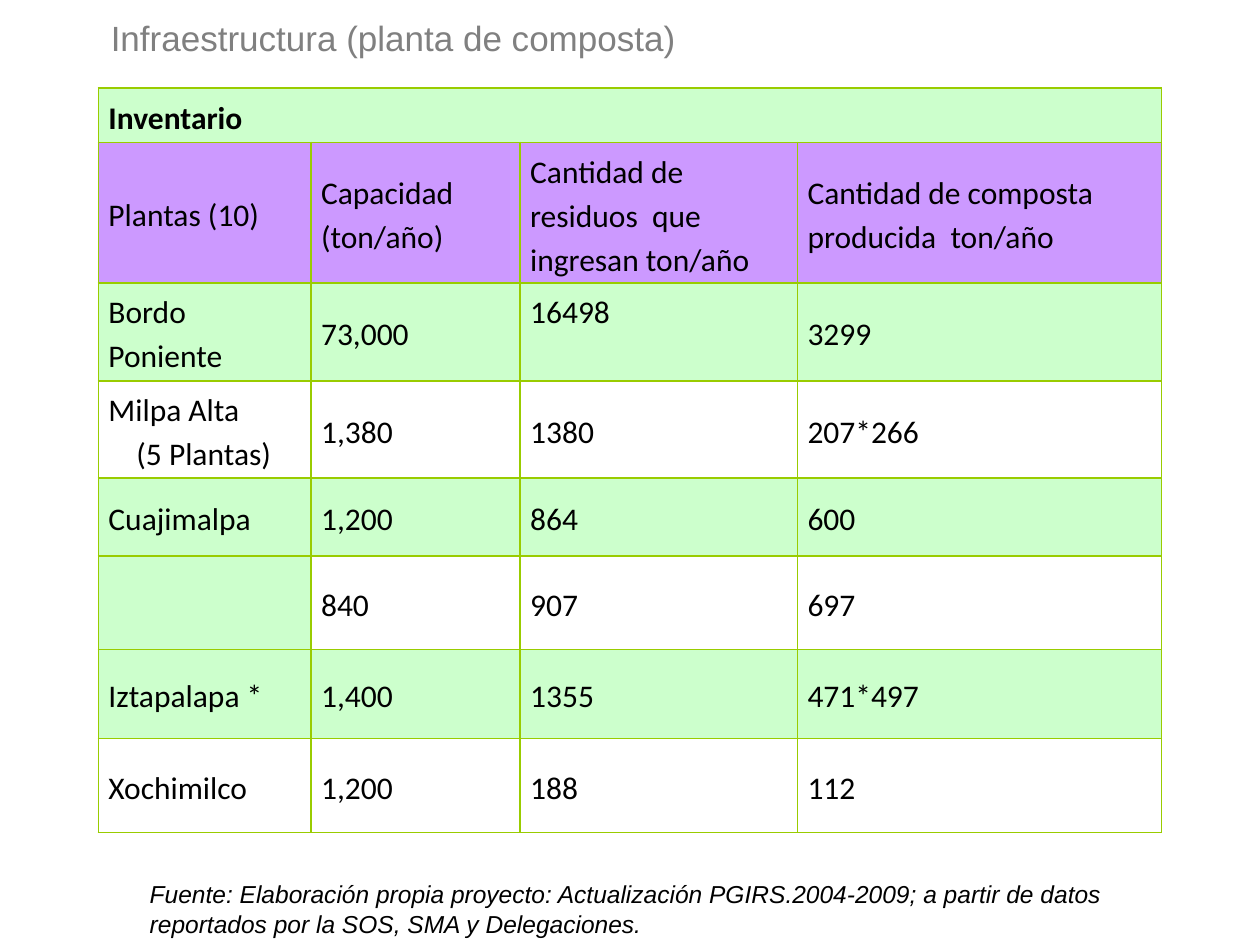
import pptx
import pptx.dml.color
import pptx.enum.text
import pptx.oxml
import pptx.oxml.ns
import pptx.util

Pt = pptx.util.Pt
RGBColor = pptx.dml.color.RGBColor
ANCHOR = pptx.enum.text.MSO_ANCHOR

BLACK = RGBColor(0x00, 0x00, 0x00)
GRAY = RGBColor(0x80, 0x80, 0x80)
GREEN = RGBColor(0xCC, 0xFF, 0xCC)
PURPLE = RGBColor(0xCC, 0x99, 0xFF)
BORDER = RGBColor(0x99, 0xCC, 0x00)

TITLE = "Infraestructura (planta de composta)"
SOURCE = ("Fuente: Elaboración propia proyecto: Actualización PGIRS.2004-2009; "
          "a partir de datos reportados por la SOS, SMA y Delegaciones.")
INVENTORY = [
    ("Inventario", "", "", ""),
    ("Plantas (10)", "Capacidad (ton/año)", "Cantidad de residuos  que ingresan ton/año",
     "Cantidad de composta producida  ton/año"),
    ("Bordo Poniente", "73,000", "16498", "3299"),
    ("Milpa Alta\v(5 Plantas)", "1,380", "1380", "207*266"),
    ("Cuajimalpa", "1,200", "864", "600"),
    ("", "840", "907", "697"),
    ("Iztapalapa *", "1,400", "1355", "471*497"),
    ("Xochimilco", "1,200", "188", "112"),
]
ROW_FILLS = [GREEN, PURPLE, GREEN, None, GREEN, None, GREEN, None]
CELL_FILLS = {(5, 0): GREEN}
TOP_ANCHORED = {(2, 2)}
HANGING = {(3, 0): 16}
COLUMN_WIDTHS = [121.5, 119.5, 158.5, 208]
ROW_HEIGHTS = [31, 80, 56, 55.5, 44.5, 53.5, 51, 53.5]
TABLE_LEFT, TABLE_TOP = 56.2, 50.4


def style(paragraph, font_name, size, color, bold=False, italic=False):
    font = paragraph.font
    font.name, font.size = font_name, Pt(size)
    font.bold, font.italic = bold, italic
    font.color.rgb = color


def add_text(slide, text, left, top, width, height, size, color, italic=False):
    frame = slide.shapes.add_textbox(Pt(left), Pt(top), Pt(width), Pt(height)).text_frame
    frame.word_wrap = True
    frame.text = text
    style(frame.paragraphs[0], "Arial", size, color, italic=italic)


def add_borders(cell):
    properties = cell._tc.get_or_add_tcPr()
    for side in ("lnL", "lnR", "lnT", "lnB"):
        properties.append(pptx.oxml.parse_xml(
            f'<a:{side} {pptx.oxml.ns.nsdecls("a")} w="{Pt(1)}"><a:solidFill>'
            f'<a:srgbClr val="{BORDER}"/></a:solidFill></a:{side}>'))


def fill_cell(cell, text, row, column):
    add_borders(cell)
    color = CELL_FILLS.get((row, column), ROW_FILLS[row])
    if color is None:
        cell.fill.background()
    else:
        cell.fill.solid()
        cell.fill.fore_color.rgb = color
    cell.margin_left = cell.margin_right = Pt(5.8)
    cell.margin_top = cell.margin_bottom = Pt(2.9)
    cell.vertical_anchor = ANCHOR.TOP if (row, column) in TOP_ANCHORED else ANCHOR.MIDDLE
    paragraph = cell.text_frame.paragraphs[0]
    paragraph.text = text
    paragraph.line_spacing = 1.15
    paragraph.space_after = Pt(10)
    if (row, column) in HANGING:
        indent = Pt(HANGING[row, column])
        properties = paragraph._p.get_or_add_pPr()
        properties.set("marL", str(indent))
        properties.set("indent", str(-indent))
    style(paragraph, "Calibri", 18, BLACK, bold=row == 0)


def add_inventory(slide):
    table = slide.shapes.add_table(
        len(ROW_HEIGHTS), len(COLUMN_WIDTHS), Pt(TABLE_LEFT), Pt(TABLE_TOP),
        Pt(sum(COLUMN_WIDTHS)), Pt(sum(ROW_HEIGHTS))).table
    table.first_row = table.horz_banding = False
    for column, width in zip(table.columns, COLUMN_WIDTHS):
        column.width = Pt(width)
    for row, height in zip(table.rows, ROW_HEIGHTS):
        row.height = Pt(height)
    for row, values in enumerate(INVENTORY):
        for column, text in enumerate(values):
            fill_cell(table.cell(row, column), text, row, column)
    table.cell(0, 0).merge(table.cell(0, len(COLUMN_WIDTHS) - 1))


def main():
    presentation = pptx.Presentation()
    presentation.slide_width, presentation.slide_height = Pt(720), Pt(540)
    slide = presentation.slides.add_slide(presentation.slide_layouts[6])
    add_text(slide, SOURCE, 78.5, 499, 592.5, 41, 14, BLACK, italic=True)
    add_text(slide, TITLE, 56.2, 5.8, 472, 31, 20, GRAY)
    add_inventory(slide)
    presentation.save("out.pptx")


if __name__ == "__main__":
    main()
